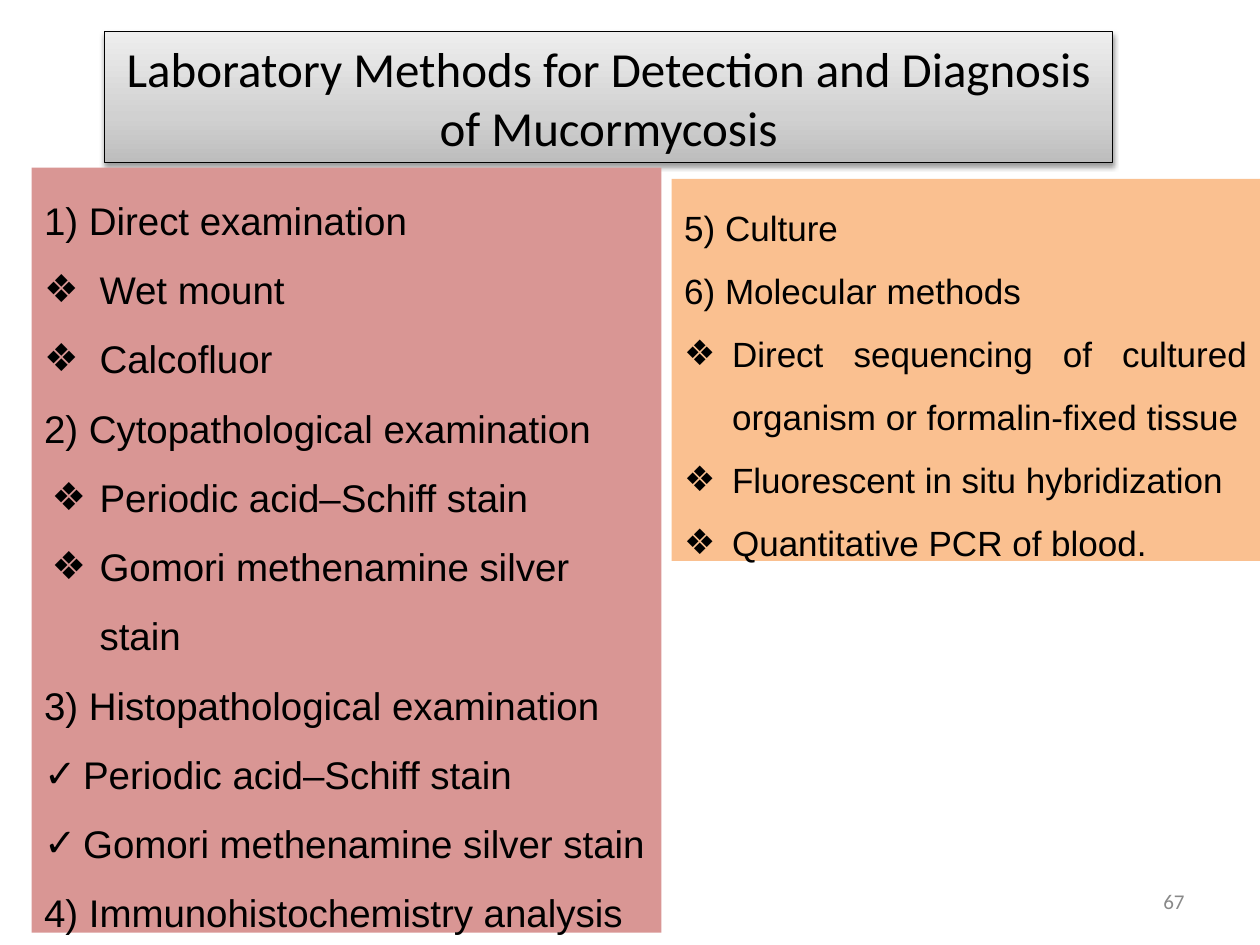
from lxml import etree
from copy import deepcopy
from pptx import Presentation
from pptx.dml.color import RGBColor
from pptx.enum.text import MSO_ANCHOR, MSO_AUTO_SIZE, PP_ALIGN
from pptx.oxml import parse_xml
from pptx.oxml.ns import nsdecls, qn
from pptx.util import Inches, Pt

BLACK = RGBColor(0x00, 0x00, 0x00)
GREY = RGBColor(0x89, 0x89, 0x89)
ROSE = RGBColor(0xD9, 0x96, 0x94)
ORANGE = RGBColor(0xFA, 0xC0, 0x90)
TITLE_GRADIENT = [
    (0, RGBColor(0xBD, 0xBD, 0xBD)),
    (0.35, RGBColor(0xD1, 0xD1, 0xD1)),
    (1, RGBColor(0xEE, 0xEE, 0xEE)),
]

TITLE = "Laboratory Methods for Detection and Diagnosis of Mucormycosis"
PAGE_NUMBER = "67"

# Paragraph styles: bullet, left margin and hanging indent in inches, alignment
HEADING = dict()
DIAMOND = dict(bullet="❖", margin=0.44, hanging=0.44)
INSET_DIAMOND = dict(bullet="❖", margin=0.44, hanging=0.38)
CHECK = dict(bullet="✓", margin=0.31, hanging=0.31)
JUSTIFIED = dict(bullet="❖", margin=0.38, hanging=0.38, align=PP_ALIGN.JUSTIFY)

MICROSCOPY = [
    ("1) Direct examination", HEADING),
    ("Wet mount", DIAMOND),
    ("Calcofluor", DIAMOND),
    ("2) Cytopathological examination", HEADING),
    ("Periodic acid–Schiff stain", INSET_DIAMOND),
    ("Gomori methenamine silver stain", INSET_DIAMOND),
    ("3) Histopathological examination", HEADING),
    ("Periodic acid–Schiff stain", CHECK),
    ("Gomori methenamine silver stain", CHECK),
    ("4) Immunohistochemistry analysis", HEADING),
]
CULTURE_AND_MOLECULAR = [
    ("5) Culture", HEADING),
    ("6) Molecular methods", HEADING),
    ("Direct sequencing of cultured organism or formalin-fixed tissue", JUSTIFIED),
    ("Fluorescent in situ hybridization", JUSTIFIED),
    ("Quantitative PCR of blood.", JUSTIFIED),
]


def place(shape, left, top, width, height):
    shape.left, shape.top = Inches(left), Inches(top)
    shape.width, shape.height = Inches(width), Inches(height)


def write(paragraph, text, size, font="Arial", color=BLACK, align=PP_ALIGN.LEFT,
          line_spacing=1.0, bullet=None, margin=0, hanging=0):
    properties = paragraph._p.get_or_add_pPr()
    properties.set("marL", str(Inches(margin)))
    properties.set("indent", str(-Inches(hanging)))
    if bullet:
        etree.SubElement(properties, qn("a:buFont"), typeface="Arial")
        etree.SubElement(properties, qn("a:buChar"), char=bullet)
    else:
        etree.SubElement(properties, qn("a:buNone"))
    paragraph.alignment = align
    paragraph.line_spacing = line_spacing
    paragraph.space_before = Pt(0)
    run = paragraph.add_run()
    run.text = text
    run.font.size, run.font.name = Pt(size), font
    run.font.color.rgb = color


def style_title(shape):
    """Give the title its grey gradient, black outline and soft shadow."""
    shape.fill.gradient()
    shape.fill.gradient_angle = 90
    stops = shape.fill._xPr.find(qn("a:gradFill")).find(qn("a:gsLst"))
    stops.append(deepcopy(stops[0]))
    for stop, (position, color) in zip(shape.fill.gradient_stops, TITLE_GRADIENT):
        stop.position = position
        stop.color.rgb = color
    shape.line.color.rgb = BLACK
    shape.line.width = Pt(0.75)
    shape._element.spPr.append(parse_xml(
        f'<a:effectLst {nsdecls("a")}>'
        f'<a:outerShdw blurRad="{Pt(3.1)}" dist="{Pt(1.6)}" dir="5400000" rotWithShape="0">'
        '<a:srgbClr val="000000"><a:alpha val="38000"/></a:srgbClr>'
        '</a:outerShdw></a:effectLst>'))


def fill_list(shape, items, size, color):
    shape.fill.solid()
    shape.fill.fore_color.rgb = color
    frame = shape.text_frame
    frame.auto_size = MSO_AUTO_SIZE.SHAPE_TO_FIT_TEXT
    for index, (text, style) in enumerate(items):
        paragraph = frame.add_paragraph() if index else frame.paragraphs[0]
        write(paragraph, text, size, line_spacing=1.5, **style)


def main():
    presentation = Presentation()
    presentation.slide_width, presentation.slide_height = Inches(10), Inches(7.5)
    two_content = presentation.slide_layouts[3]
    slide = presentation.slides.add_slide(two_content)
    title, left_list, right_list = slide.placeholders

    place(title, 0.83, 0.25, 8, 1.04)
    style_title(title)
    title.text_frame.auto_size = MSO_AUTO_SIZE.SHAPE_TO_FIT_TEXT
    write(title.text_frame.paragraphs[0], TITLE, 28, font="Calibri",
          align=PP_ALIGN.CENTER)

    place(left_list, 0.25, 1.33, 5, 6.17)
    fill_list(left_list, MICROSCOPY, 22, ROSE)
    place(right_list, 5.33, 1.42, 4.67, 3.13)
    fill_list(right_list, CULTURE_AND_MOLECULAR, 20, ORANGE)

    number = slide.shapes.add_textbox(
        Inches(7.17), Inches(6.95), Inches(2.33), Inches(0.4))
    number.text_frame.word_wrap = True
    number.text_frame.vertical_anchor = MSO_ANCHOR.MIDDLE
    write(number.text_frame.paragraphs[0], PAGE_NUMBER, 12, font="Calibri",
          color=GREY, align=PP_ALIGN.RIGHT)

    presentation.save("out.pptx")


if __name__ == "__main__":
    main()
